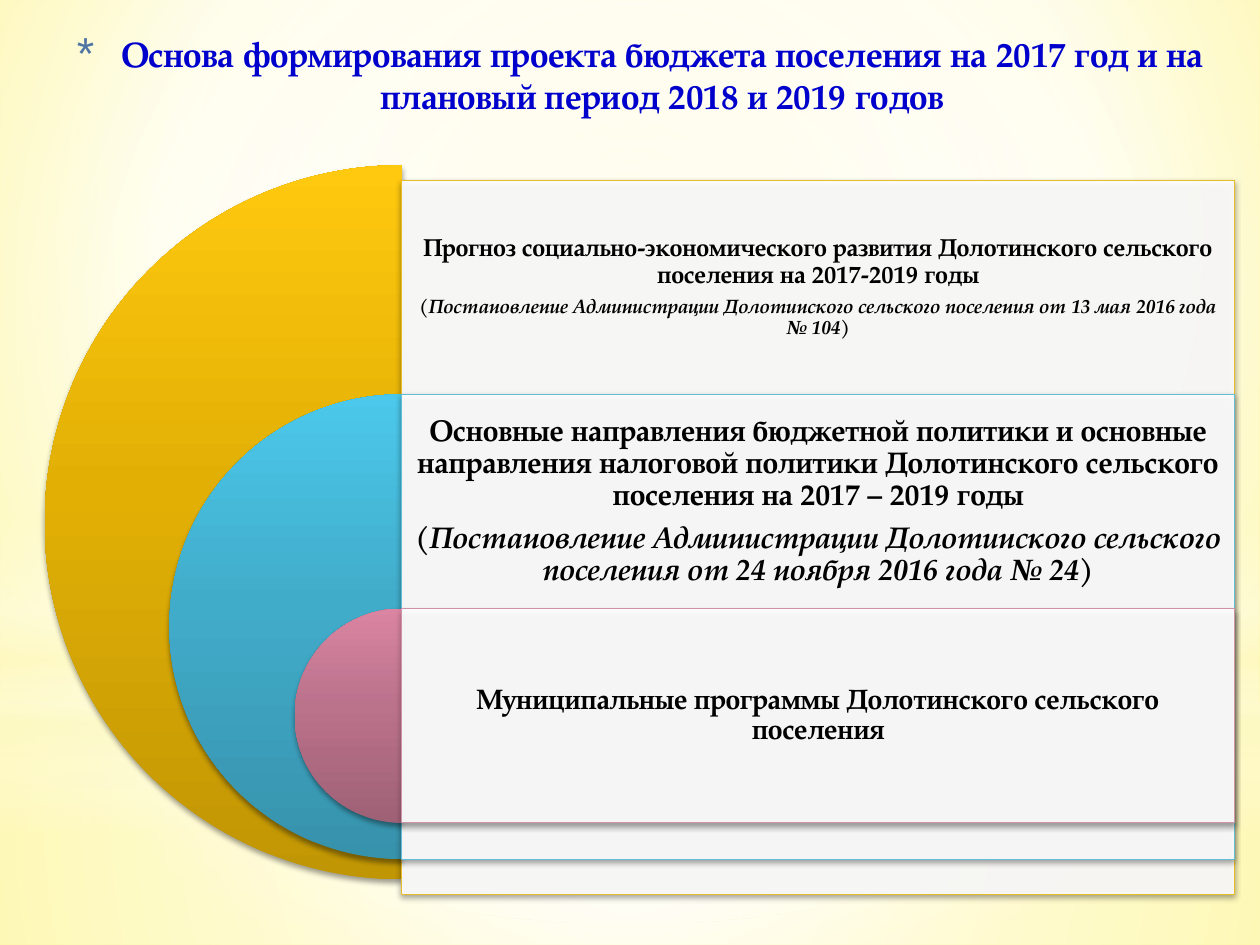
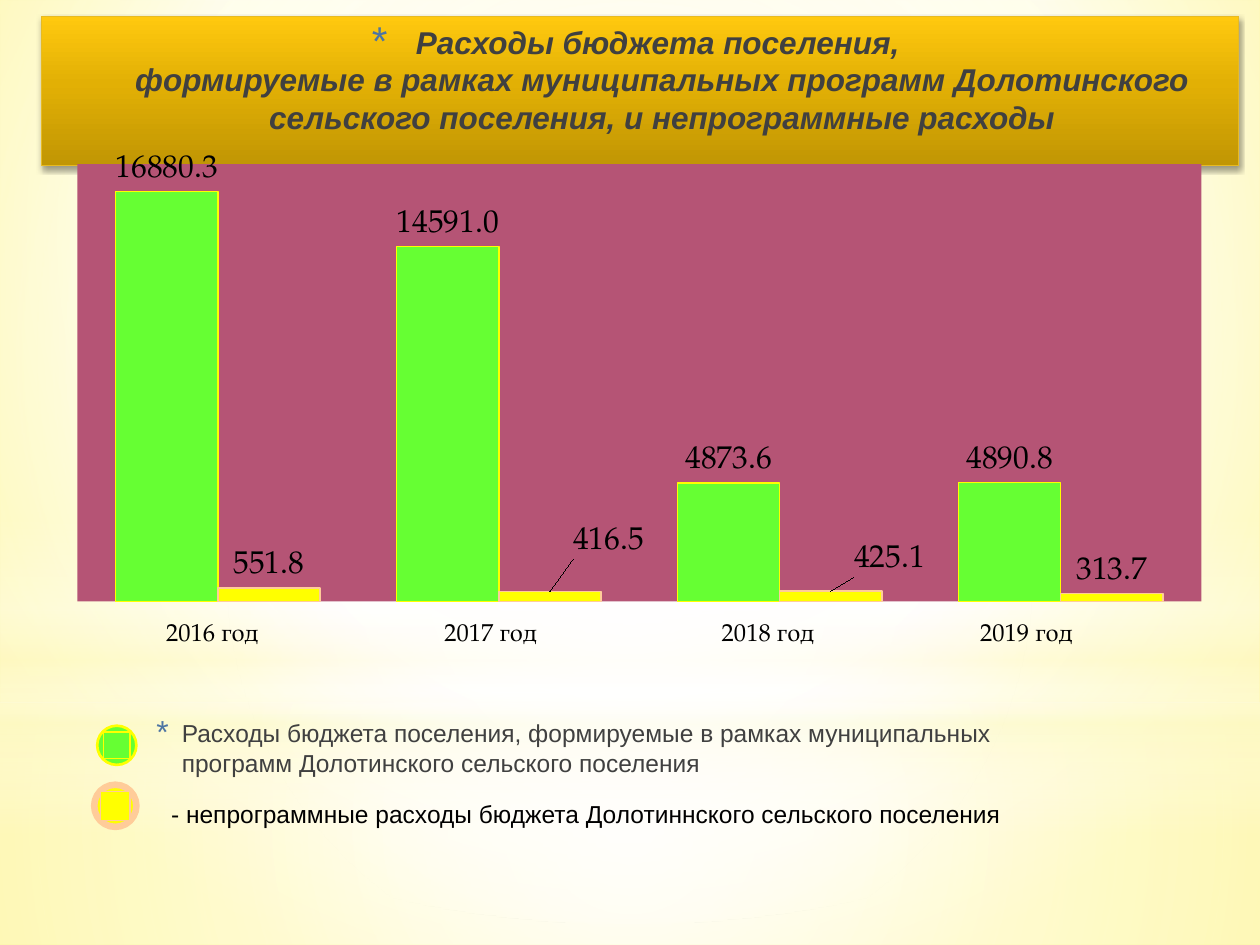
from dataclasses import dataclass

from pptx import Presentation
from pptx.chart.data import CategoryChartData
from pptx.dml.color import RGBColor
from pptx.enum.chart import XL_CHART_TYPE, XL_LABEL_POSITION
from pptx.enum.shapes import MSO_SHAPE
from pptx.enum.text import MSO_ANCHOR, MSO_AUTO_SIZE, PP_ALIGN
from pptx.oxml import parse_xml
from pptx.oxml.ns import nsdecls, qn
from pptx.util import Cm, Pt

RECTANGLE, OVAL, PIE = MSO_SHAPE.RECTANGLE, MSO_SHAPE.OVAL, MSO_SHAPE.PIE
TOP, MIDDLE = MSO_ANCHOR.TOP, MSO_ANCHOR.MIDDLE
CENTER, LEFT = PP_ALIGN.CENTER, PP_ALIGN.LEFT
NO_AUTOFIT = MSO_AUTO_SIZE.NONE
COLUMNS = XL_CHART_TYPE.COLUMN_CLUSTERED
OUTSIDE_END = XL_LABEL_POSITION.OUTSIDE_END


@dataclass(frozen=True)
class Theme:
    serif: str = "TeX Gyre Pagella"
    sans: str = "Arial"
    black: str = "000000"
    white: str = "FFFFFF"
    grey: str = "404040"
    title_blue: str = "0000CC"
    bullet: str = "4E75A3"
    cream: str = "FEFAC9"
    green: str = "66FF33"
    yellow: str = "FFFF00"
    peach: str = "FFCC99"
    plum: str = "B55475"
    gold_line: str = "E7BA23"
    gold: tuple = ("C19604", "E2B005", "FFC90F")
    blue: tuple = ("3792AC", "41ACCA", "4BC8EB")
    rose: tuple = ("9F6176", "BB728B", "DA85A2")
    title_size: int = 20
    banner_size: int = 18
    label_size: int = 18
    text_size: int = 14


THEME = Theme()
CENTER_FOCUS = (50, 50, 50, 50)
WIDE = 25.4


def set_gradient(fill, element, stops, angle=None, focus=None):
    fill.gradient()
    stop_xml = "".join(
        f'<a:gs pos="{position * 1000}"><a:srgbClr val="{color}">'
        f'<a:alpha val="{opacity * 1000}"/></a:srgbClr></a:gs>'
        for position, color, opacity in stops
    )
    if focus:
        left, top, right, bottom = (side * 1000 for side in focus)
        direction = (
            f'<a:path path="circle"><a:fillToRect l="{left}" t="{top}" '
            f'r="{right}" b="{bottom}"/></a:path>'
        )
    else:
        direction = f'<a:lin ang="{angle * 60000}" scaled="0"/>'
    gradient = parse_xml(
        f'<a:gradFill {nsdecls("a")} rotWithShape="1"><a:gsLst>{stop_xml}</a:gsLst>'
        f"{direction}</a:gradFill>"
    )
    default = element.find(".//" + qn("a:gradFill"))
    default.getparent().replace(default, gradient)


def set_metal_fill(shape, colors):
    stops = [(position, color, 100) for position, color in zip((0, 55, 100), colors)]
    set_gradient(shape.fill, shape.element, stops, angle=270)


def set_line(shape, color, width):
    shape.line.color.rgb = RGBColor.from_string(color)
    shape.line.width = Pt(width)


def add_shadow(shape):
    shape.shadow.inherit = False
    shape.element.spPr.find(qn("a:effectLst")).append(parse_xml(
        f'<a:outerShdw {nsdecls("a")} blurRad="{Pt(3.1)}" dist="{Pt(2)}" dir="5400000" '
        f'rotWithShape="0"><a:srgbClr val="{THEME.black}"><a:alpha val="38000"/>'
        "</a:srgbClr></a:outerShdw>"
    ))


def place(shape, left, top, width, height):
    shape.left, shape.top = Cm(left), Cm(top)
    shape.width, shape.height = Cm(width), Cm(height)


def add_plain_shape(shapes, kind, box, color=None, opacity=100, line=None):
    shape = shapes.add_shape(kind, *map(Cm, box))
    shape.shadow.inherit = False
    if color:
        shape.fill.solid()
        shape.fill.fore_color.rgb = RGBColor.from_string(color)
        if opacity < 100:
            color_element = shape.element.spPr.find(".//" + qn("a:srgbClr"))
            color_element.append(
                parse_xml(f'<a:alpha {nsdecls("a")} val="{opacity * 1000}"/>')
            )
    if line:
        set_line(shape, *line)
    else:
        shape.line.fill.background()
    return shape


def format_font(font, size, name, color, bold=False, italic=False):
    font.size, font.name = Pt(size), name
    font.bold, font.italic = bold, italic
    font.color.rgb = RGBColor.from_string(color)


def write(paragraph, text, *, size=THEME.text_size, font=THEME.serif, color=THEME.black,
          bold=False, italic=False, align=LEFT, line_spacing=None, space_after=None):
    paragraph.alignment = align
    if line_spacing:
        paragraph.line_spacing = line_spacing
    if space_after is not None:
        paragraph.space_after = Pt(space_after)
    for index, line in enumerate(text.split("\n")):
        if index:
            paragraph.add_line_break()
        run = paragraph.add_run()
        run.text = line
        format_font(run.font, size, font, color, bold, italic)


def add_star_bullet(paragraph, indent, hanging, percent):
    properties = paragraph._p.get_or_add_pPr()
    properties.set("marL", str(Cm(indent)))
    properties.set("indent", str(-Cm(hanging)))
    for xml in (
        f'<a:buClr {nsdecls("a")}><a:srgbClr val="{THEME.bullet}"/></a:buClr>',
        f'<a:buSzPct {nsdecls("a")} val="{percent * 1000}"/>',
        f'<a:buFont {nsdecls("a")} typeface="{THEME.sans}"/>',
        f'<a:buChar {nsdecls("a")} char="*"/>',
    ):
        properties.append(parse_xml(xml))


def fill_placeholder(shape, box, text, indent, hanging, percent, **text_format):
    place(shape, *box)
    frame = shape.text_frame
    frame.auto_size = NO_AUTOFIT
    frame.vertical_anchor = TOP
    write(frame.paragraphs[0], text, **text_format)
    add_star_bullet(frame.paragraphs[0], indent, hanging, percent)


def fill_title(slide, box, text, **text_format):
    fill_placeholder(slide.shapes.title, box, text, 0.89, 0.89, 128,
                     bold=True, align=CENTER, **text_format)


def add_text(slide, box, text, wrap=True, **text_format):
    text_box = slide.shapes.add_textbox(*map(Cm, box))
    text_box.text_frame.word_wrap = wrap
    write(text_box.text_frame.paragraphs[0], text, **text_format)


def style_master(presentation, slide):
    master = presentation.slide_master
    set_gradient(master.background.fill, master.element,
                 [(0, "FFF9B5", 100), (60, THEME.white, 100), (100, "FFF46F", 100)],
                 focus=(20, 10, 20, 60))
    white, cream = THEME.white, THEME.cream
    glows = [
        (RECTANGLE, (0, 14.17, WIDE, 4.88),
         [(0, white, 91), (37, white, 76), (100, cream, 79)], {"focus": CENTER_FOCUS}),
        (RECTANGLE, (0, 0, WIDE, 14.17),
         [(0, white, 89), (48, white, 62), (100, cream, 79)], {"focus": CENTER_FOCUS}),
        (RECTANGLE, (0, 10.46, WIDE, 6.35),
         [(0, white, 0), (29, white, 30), (45, cream, 40), (55, white, 26),
          (65, cream, 60), (100, white, 0)], {"angle": 90}),
        (OVAL, (0, 4.45, WIDE, 14.17),
         [(0, white, 100), (56, white, 0)], {"focus": CENTER_FOCUS}),
    ]
    for index, (kind, box, stops, direction) in enumerate(glows):
        glow = add_plain_shape(slide.shapes, kind, box)
        set_gradient(glow.fill, glow.element, stops, **direction)
        master.shapes.element.insert(2 + index, glow.element)


def add_basis_level(slide, level, pie_top, diameter, colors, line_color, inset, lines):
    axis, panel_width, step = 8.1, 16.79, 4.32
    panel_top = 3.63 + level * step
    pie = add_plain_shape(slide.shapes, PIE,
                          (axis - diameter / 2, pie_top, diameter, diameter))
    pie.adjustments[0], pie.adjustments[1] = 54, 162
    set_metal_fill(pie, colors)
    add_shadow(pie)
    panel = add_plain_shape(slide.shapes, RECTANGLE, (axis, panel_top, panel_width, diameter),
                            THEME.white, opacity=90, line=(line_color, 0.5))
    add_shadow(panel)
    text_box = slide.shapes.add_textbox(Cm(axis), Cm(panel_top), Cm(panel_width), Cm(step))
    frame = text_box.text_frame
    frame.word_wrap = True
    frame.vertical_anchor = MIDDLE
    frame.margin_left = frame.margin_right = Cm(inset)
    frame.margin_top = frame.margin_bottom = Cm(inset)
    for index, (text, size) in enumerate(lines):
        paragraph = frame.add_paragraph() if index else frame.paragraphs[0]
        write(paragraph, text, size=size, bold=True, italic=index > 0, align=CENTER,
              line_spacing=0.9, space_after=round(0.35 * size, 1))


def build_basis_slide(slide):
    fill_title(slide, (0.84, 0.53, 24.13, 2.21),
               "Основа формирования проекта бюджета поселения на 2017 год и на "
               "плановый период 2018 и 2019 годов",
               size=THEME.title_size, color=THEME.title_blue)
    levels = [
        (3.33, 14.4, THEME.gold, "E7BC29", 0.15, [
            ("Прогноз социально-экономического развития Долотинского сельского "
             "поселения на 2017-2019 годы", 14),
            ("(Постановление Администрации Долотинского сельского поселения "
             "от 13 мая 2016 года № 104)", 11)]),
        (7.95, 9.37, THEME.blue, "62BED7", 0.18, [
            ("Основные направления бюджетной политики и основные направления налоговой "
             "политики Долотинского сельского поселения на 2017 – 2019 годы", 17),
            ("(Постановление Администрации Долотинского сельского поселения "
             "от 24 ноября 2016 года № 24)", 17)]),
        (12.27, 4.32, THEME.rose, "D092A7", 0.18, [
            ("Муниципальные программы Долотинского сельского поселения", 16)]),
    ]
    for level, details in enumerate(levels):
        add_basis_level(slide, level, *details)


def set_manual_layout(element, index, x, y, size=None):
    modes = '<c:xMode val="edge"/><c:yMode val="edge"/>' if size else ""
    target = '<c:layoutTarget val="inner"/>' if size else ""
    extent = f'<c:w val="{size[0]}"/><c:h val="{size[1]}"/>' if size else ""
    for default in element.findall(qn("c:layout")):
        element.remove(default)
    element.insert(index, parse_xml(
        f'<c:layout {nsdecls("c")}><c:manualLayout>{target}{modes}'
        f'<c:x val="{x}"/><c:y val="{y}"/>{extent}</c:manualLayout></c:layout>'
    ))


def add_spending_chart(slide):
    data = CategoryChartData(number_format="0.0")
    data.categories = ["1", "2", "3", "4"]
    data.add_series("Series 1", (16880.3, 14591, 4873.6, 4890.8))
    data.add_series("Series 2", (551.8, 416.5, 425.1, 313.7))
    box = map(Cm, (1.09, 3.12, 23.6, 9.19))
    chart = slide.shapes.add_chart(COLUMNS, *box, data).chart
    chart.has_legend = chart.has_title = False
    label_format = (THEME.label_size, THEME.serif, THEME.black)
    format_font(chart.font, *label_format)
    chart.category_axis.visible = chart.value_axis.visible = False
    chart.value_axis.has_major_gridlines = False
    chart.value_axis.minimum_scale, chart.value_axis.maximum_scale = 0, 18000
    plot = chart.plots[0]
    plot.gap_width, plot.overlap, plot.vary_by_categories = 75, 0, False
    styles = [(THEME.green, THEME.yellow), (THEME.yellow, THEME.peach)]
    for series, (color, line_color) in zip(plot.series, styles):
        series.format.fill.solid()
        series.format.fill.fore_color.rgb = RGBColor.from_string(color)
        set_line(series.format, line_color, 0.75)
        labels = series.data_labels
        labels.show_value = True
        labels.number_format, labels.number_format_is_linked = "0.0", False
        labels.position = OUTSIDE_END
        format_font(labels.font, *label_format)
    for point, x, y in ((1, 0.05, -0.06), (2, 0.05, -0.02)):
        label = plot.series[1].points[point].data_label
        label.position = OUTSIDE_END
        format_font(label.font, *label_format)
        label_element = plot.series[1].data_labels._element.findall(qn("c:dLbl"))[point - 1]
        set_manual_layout(label_element, 1, x, y)
    plot_area = chart._chartSpace.find(".//" + qn("c:plotArea"))
    set_manual_layout(plot_area, 0, 0.02, 0.02, size=(0.96, 0.96))
    plot_area.append(parse_xml(
        f'<c:spPr {nsdecls("c", "a")}><a:solidFill><a:srgbClr val="{THEME.plum}"/>'
        "</a:solidFill><a:ln><a:noFill/></a:ln></c:spPr>"
    ))


def add_legend_marker(slide, left, top, size, color, line_color, ring_width):
    inset = 0.13
    shapes = slide.shapes.add_group_shape().shapes
    add_plain_shape(shapes, OVAL, (left, top, size, size), color,
                    line=(line_color, ring_width))
    inner = size - 2 * inset
    add_plain_shape(shapes, RECTANGLE, (left + inset, top + inset, inner, inner), color,
                    line=(line_color, 0.75))


def build_spending_slide(slide):
    fill_title(slide, (0.84, 0.33, 24.13, 3),
               "Расходы бюджета поселения, \nформируемые в рамках муниципальных программ "
               "Долотинского сельского поселения, и непрограммные расходы",
               size=THEME.banner_size, font=THEME.sans, color=THEME.grey, italic=True)
    banner = slide.shapes.title
    set_metal_fill(banner, THEME.gold)
    set_line(banner, THEME.gold_line, 0.5)
    add_shadow(banner)
    add_spending_chart(slide)
    add_legend_marker(slide, 1.9, 15.82, 0.85, THEME.yellow, THEME.peach, 3.78)
    add_legend_marker(slide, 1.96, 14.63, 0.79, THEME.green, THEME.yellow, 1.5)
    add_text(slide, (3.2, 15.98, 19.38, 0.86),
             "- непрограммные расходы бюджета Долотиннского сельского поселения",
             font=THEME.sans)
    for year, left in zip(range(2016, 2020), (3.1, 8.71, 14.3, 19.51)):
        add_text(slide, (left, 12.32, 2.49, 0.86), f"{year} год", wrap=False)
    fill_placeholder(slide.placeholders[1], (2.77, 14.35, 19.53, 1.47),
                     "Расходы бюджета поселения, формируемые в рамках муниципальных "
                     "программ Долотинского сельского поселения", 0.64, 0.51, 130,
                     font=THEME.sans, color=THEME.grey, space_after=3)


def main():
    presentation = Presentation()
    presentation.slide_width, presentation.slide_height = Cm(WIDE), Cm(19.05)
    title_only, title_and_body = presentation.slide_layouts[5], presentation.slide_layouts[1]
    basis_slide = presentation.slides.add_slide(title_only)
    style_master(presentation, basis_slide)
    build_basis_slide(basis_slide)
    build_spending_slide(presentation.slides.add_slide(title_and_body))
    presentation.save("out.pptx")


if __name__ == "__main__":
    main()
